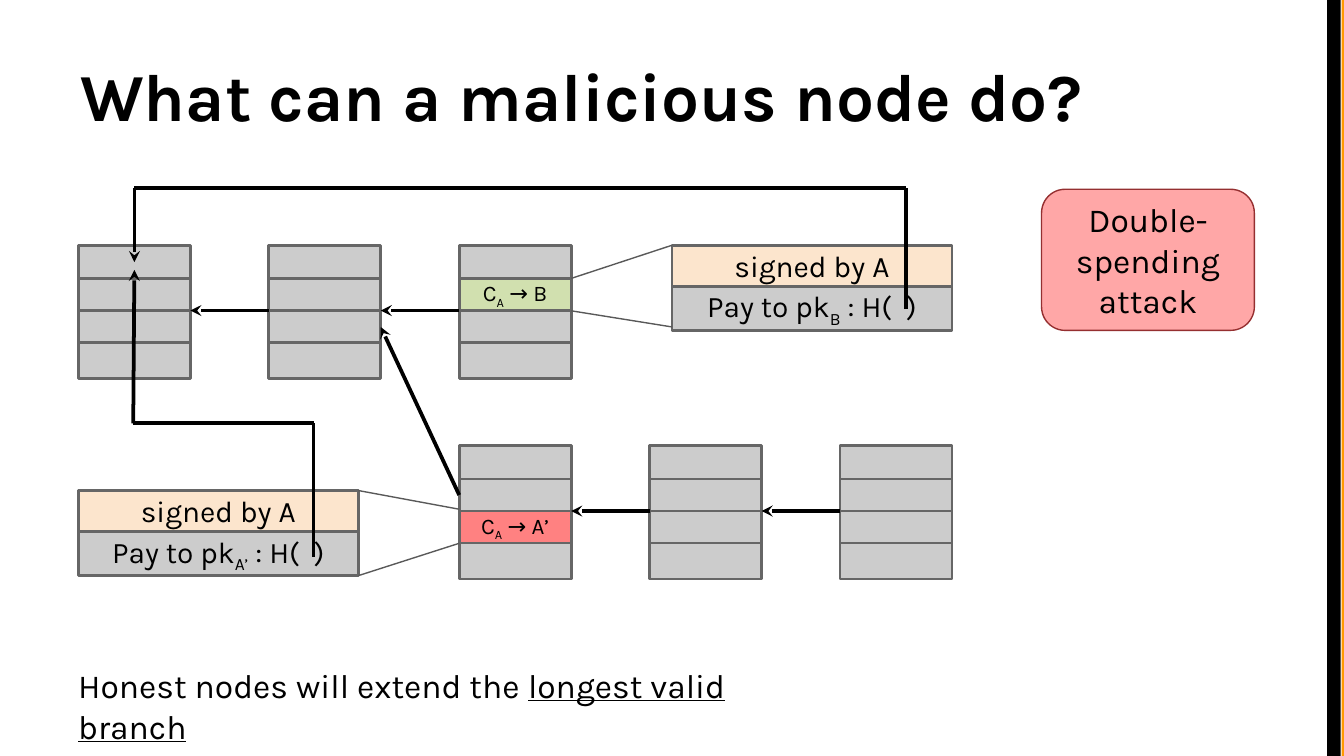
from collections import namedtuple
from itertools import pairwise

from lxml import etree
from pptx import Presentation
from pptx import util as u
from pptx.dml import color
from pptx.enum import shapes, text
from pptx.oxml import ns

COLUMNS, ROWS = 120, 67.5
UNIT = u.Inches(10) / COLUMNS
BLACK, GREY, EDGE = "000000", "CCCCCC", "666666"
BLOCK_WIDTH, BLOCK_HEIGHT, BLOCK_STEP = 10, 11.9, 17
BLOCK_EDGES = (0, 0.25, 0.49, 0.73, 1)
NOTE_EDGES = (0, 0.48, 1)
RECT = shapes.MSO_SHAPE.RECTANGLE
ROUNDED = shapes.MSO_SHAPE.ROUNDED_RECTANGLE
CENTER = text.PP_ALIGN.CENTER


class Box(namedtuple("Box", "left top width height")):
    def point(self, across, down):
        return self.left + across * self.width, self.top + down * self.height

    def bands(self, edges):
        return [
            Box(self.left, self.point(0, upper)[1], self.width, (lower - upper) * self.height)
            for upper, lower in pairwise(edges)
        ]

    def emu(self):
        return [u.Emu(round(side * UNIT)) for side in self]


def rgb(value):
    return color.RGBColor.from_string(value)


def apply(target, values):
    for name, value in values.items():
        setattr(target, name, value)


def write(shape, spans, size, align=None, bold=None, inset=0.1, anchor=text.MSO_ANCHOR.MIDDLE):
    frame = shape.text_frame
    apply(frame, {
        "word_wrap": True, "vertical_anchor": anchor,
        "margin_left": u.Inches(0.1), "margin_right": u.Inches(0.1),
        "margin_top": u.Inches(inset), "margin_bottom": u.Inches(inset),
    })
    para = frame.paragraphs[0]
    para.alignment = align
    for words, style in spans:
        span = para.add_run()
        span.text = words
        apply(span.font, {"name": "Karla", "size": u.Pt(size), "bold": bold})
        span.font.color.rgb = rgb(BLACK)
        if style == "underline":
            span.font.underline = True
        elif style == "subscript":
            span._r.get_or_add_rPr().set("baseline", "-25000")


def subscripted(before, below, after):
    return [(before, None), (below, "subscript"), (after, None)]


def panel(parent, box, fill, edge=None, weight=1.5, kind=RECT):
    shape = parent.add_shape(kind, *box.emu())
    shape.shadow.inherit = False
    shape.fill.solid()
    shape.fill.fore_color.rgb = rgb(fill)
    if edge:
        shape.line.color.rgb = rgb(edge)
        shape.line.width = u.Pt(weight)
    else:
        shape.line.fill.background()
    return shape


def connect(page, start, end, stroke=BLACK, weight=2, arrow=False):
    ends = [u.Emu(round(value * UNIT)) for value in (*start, *end)]
    line = page.shapes.add_connector(shapes.MSO_CONNECTOR.STRAIGHT, *ends)
    line.line.color.rgb = rgb(stroke)
    line.line.width = u.Pt(weight)
    if arrow:
        etree.SubElement(line.line._get_or_add_ln(), ns.qn("a:tailEnd"), type="stealth")
    etree.SubElement(line._element.spPr, ns.qn("a:effectLst"))


def route(page, points):
    legs = list(pairwise(points))
    for index, (start, end) in enumerate(legs, 1):
        connect(page, start, end, arrow=index == len(legs))


def side_bars(page, box):
    panel(page.shapes, box._replace(left=box.left + 1.3, width=box.width - 1.3), "FF9900")
    panel(page.shapes, box._replace(width=1.2), BLACK)


def title(page, box):
    shape = page.shapes.add_textbox(*box.emu())
    write(shape, [("What can a malicious node do?", None)], 36, bold=True)


def chain(page, box, count, marked_block, marked_row, fill, spans):
    for index in range(count):
        block = Box(box.left + index * BLOCK_STEP, box.top, BLOCK_WIDTH, box.height)
        group = page.shapes.add_group_shape()
        for row, band in enumerate(block.bands(BLOCK_EDGES)):
            marked = (index, row) == (marked_block, marked_row)
            cell = panel(group.shapes, band, fill if marked else GREY, EDGE)
            if marked:
                write(cell, spans, 12, CENTER)
        if index:
            left, middle = block.point(0, 0.49)
            connect(page, (left, middle), (left - BLOCK_STEP + BLOCK_WIDTH, middle), arrow=True)


def payment_note(page, box, payee):
    group = page.shapes.add_group_shape()
    signature, payment = box.bands(NOTE_EDGES)
    write(panel(group.shapes, payment, GREY, EDGE), subscripted("Pay to pk", payee, " : H(  )"), 16, CENTER)
    write(panel(group.shapes, signature, "FCE5CD", EDGE), [("signed by A", None)], 16, CENTER)


def zoom_lines(page, box, starts, ends):
    for start, end in zip(starts, ends):
        connect(page, box.point(0, start), box.point(1, end), "595959", 0.75)


def attack_label(page, box):
    shape = panel(page.shapes, box, "FFA7A7", "952F30", 0.75, ROUNDED)
    shape.adjustments[0] = 0.167
    write(shape, [("Double-spending attack", None)], 18, CENTER, inset=0.05)


def conclusion(page, box):
    shape = page.shapes.add_textbox(*box.emu())
    spans = [("Honest nodes will extend the ", None), ("longest valid branch", "underline")]
    write(shape, spans, 18, inset=0.05, anchor=text.MSO_ANCHOR.TOP)


def main():
    deck = Presentation()
    deck.slide_width = u.Emu(round(COLUMNS * UNIT))
    deck.slide_height = u.Emu(round(ROWS * UNIT))
    page = deck.slides.add_slide(deck.slide_layouts[6])

    side_bars(page, Box(118.5, 0, 1.5, ROWS))
    title(page, Box(6, 2.8, 108, 11.25))
    chain(page, Box(7, 21.9, 44, BLOCK_HEIGHT), 3, 2, 1, "D1E0AF", subscripted("C", "A", " → B"))
    chain(page, Box(41, 39.8, 44, BLOCK_HEIGHT), 3, 0, 2, "FF8181", subscripted("C", "A", " → A’"))
    connect(page, (41, 44.2), (34, 29.2), arrow=True)
    payment_note(page, Box(60, 21.9, 25, 7.6), "B")
    payment_note(page, Box(7, 43.8, 25, 7.6), "A’")
    zoom_lines(page, Box(51, 21.9, 9, 7.6), (0.39, 0.77), (0, 0.96))
    zoom_lines(page, Box(32, 43.8, 9, 7.6), (0, 1), (0.22, 0.62))
    route(page, [(80.9, 27.6), (80.9, 16.8), (12, 16.8), (12, 23.4)])
    route(page, [(28, 49.7), (28, 37.8), (11.9, 37.8), (12, 24.1)])
    attack_label(page, Box(93, 16.9, 19, 12.6))
    conclusion(page, Box(5.8, 58.8, 70.3, 4.8))
    deck.save("out.pptx")


if __name__ == "__main__":
    main()
